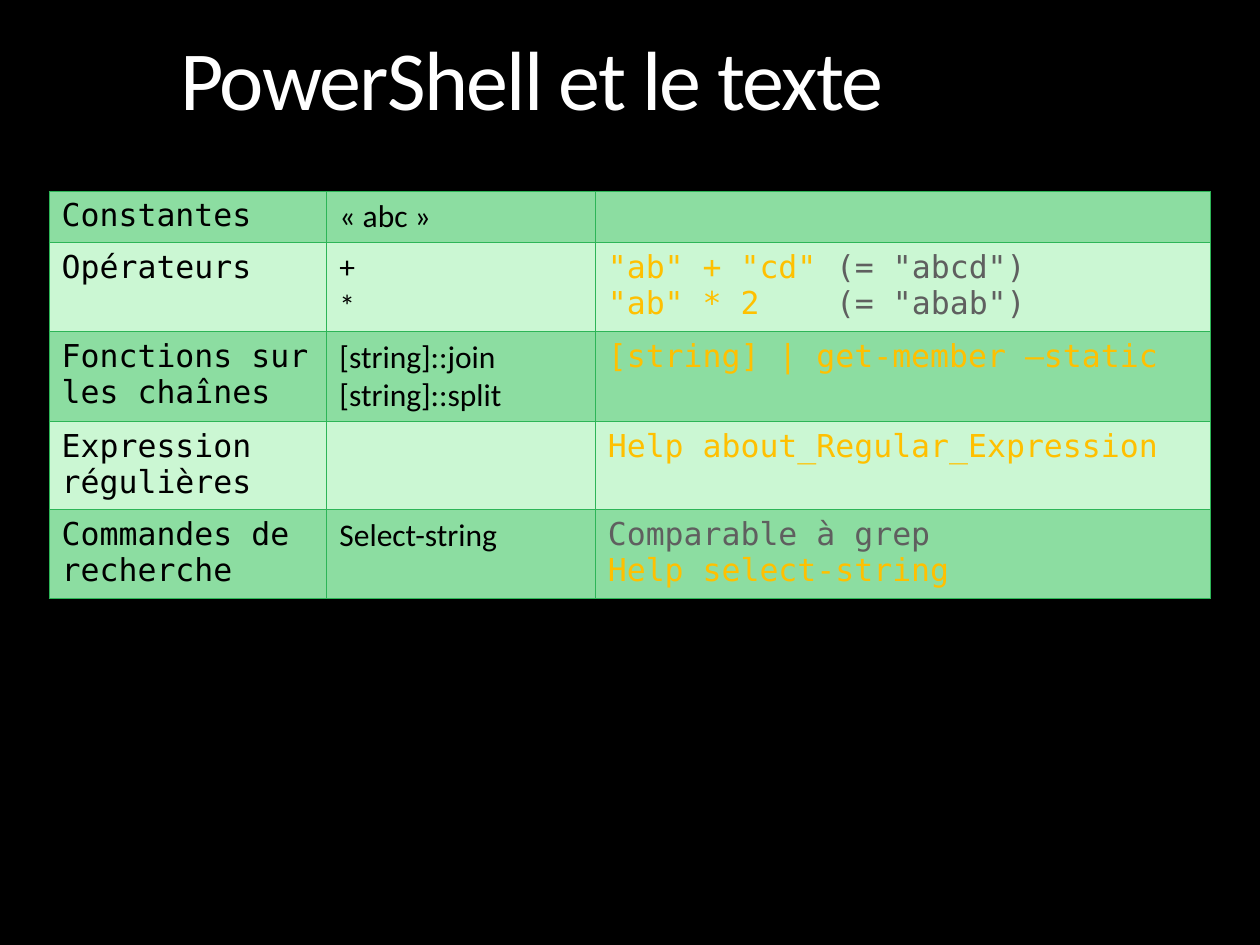
from lxml import etree
from pptx import Presentation
from pptx.dml.color import RGBColor
from pptx.enum import text
from pptx.oxml import ns
from pptx.util import Cm, Pt

BLACK = RGBColor(0x00, 0x00, 0x00)
WHITE = RGBColor(0xFF, 0xFF, 0xFF)
GOLD = RGBColor(0xFF, 0xC0, 0x00)
GREY = RGBColor(0x5F, 0x5F, 0x5F)
GREEN = RGBColor(0x2D, 0xB5, 0x57)
MID = RGBColor(0x8C, 0xDD, 0xA1)
PALE = RGBColor(0xCB, 0xF7, 0xD3)
SANS = "Calibri"
MONO = "DejaVu Sans Mono"


def write(frame, lines, font=SANS, size=18, space=1, track=0, tab=None):
    for i, line in enumerate(lines):
        para = frame.paragraphs[0] if i == 0 else frame.add_paragraph()
        para.line_spacing = space
        if tab:
            stops = etree.SubElement(para._p.get_or_add_pPr(), ns.qn("a:tabLst"))
            etree.SubElement(stops, ns.qn("a:tab"), pos=str(tab), algn="l")
        para.font.size = Pt(size)
        for words, tint in line:
            run = para.add_run()
            run.text = words
            run.font.name = font
            run.font.size = Pt(size)
            run.font.color.rgb = tint
            if track:
                run._r.get_or_add_rPr().set("spc", str(track))


deck = Presentation()
deck.slide_width = Cm(25.4)
deck.slide_height = Cm(19.05)
slide = deck.slides.add_slide(deck.slide_layouts[6])
slide.background.fill.solid()
slide.background.fill.fore_color.rgb = BLACK

title = slide.shapes.add_textbox(Cm(3.38), Cm(0.64), Cm(22.86), Cm(3.18)).text_frame
title.word_wrap = True
title.vertical_anchor = text.MSO_ANCHOR.TOP
write(title, [[("PowerShell et le texte", WHITE)]], size=48, space=0.9, track=-100)

rows = [
    ("Constantes", ["«\u00a0abc\u00a0»"], []),
    ("Opérateurs", ["+", "*"], [
        [('"ab" + "cd"\t', GOLD), ('(= "abcd")', GREY)],
        [('"ab" * 2\t', GOLD), ('(= "abab")', GREY)],
    ]),
    ("Fonctions sur les chaînes", ["[string]::join", "[string]::split"],
     [[("[string] | get-member –static", GOLD)]]),
    ("Expression régulières", [], [[("Help about_Regular_Expression", GOLD)]]),
    ("Commandes de recherche", ["Select-string"],
     [[("Comparable à grep", GREY)], [("Help select-string", GOLD)]]),
]
wide = [5.6, 5.41, 12.4]
high = [1.03, 1.8, 1.81, 1.72, 1.73]
grid = slide.shapes.add_table(
    len(rows), len(wide), Cm(0.99), Cm(3.86), Cm(sum(wide)), Cm(sum(high))
).table
for col, width in zip(grid.columns, wide):
    col.width = Cm(width)
for row, height in zip(grid.rows, high):
    row.height = Cm(height)

for r, (topic, items, demo) in enumerate(rows):
    left, mid, right = grid.rows[r].cells
    write(left.text_frame, [[(topic, BLACK)]], font=MONO)
    write(mid.text_frame, [[(item, BLACK)] for item in items])
    write(right.text_frame, demo, font=MONO, tab=Cm(4.6) if r == 1 else None)
    for cell in (left, mid, right):
        cell.fill.solid()
        cell.fill.fore_color.rgb = PALE if r % 2 else MID
        props = cell._tc.get_or_add_tcPr()
        for i, side in enumerate(("lnL", "lnR", "lnT", "lnB")):
            edge = etree.Element(ns.qn("a:" + side), w=str(Pt(0.75)))
            paint = etree.SubElement(edge, ns.qn("a:solidFill"))
            etree.SubElement(paint, ns.qn("a:srgbClr"), val=str(GREEN))
            props.insert(i, edge)

deck.save("out.pptx")
